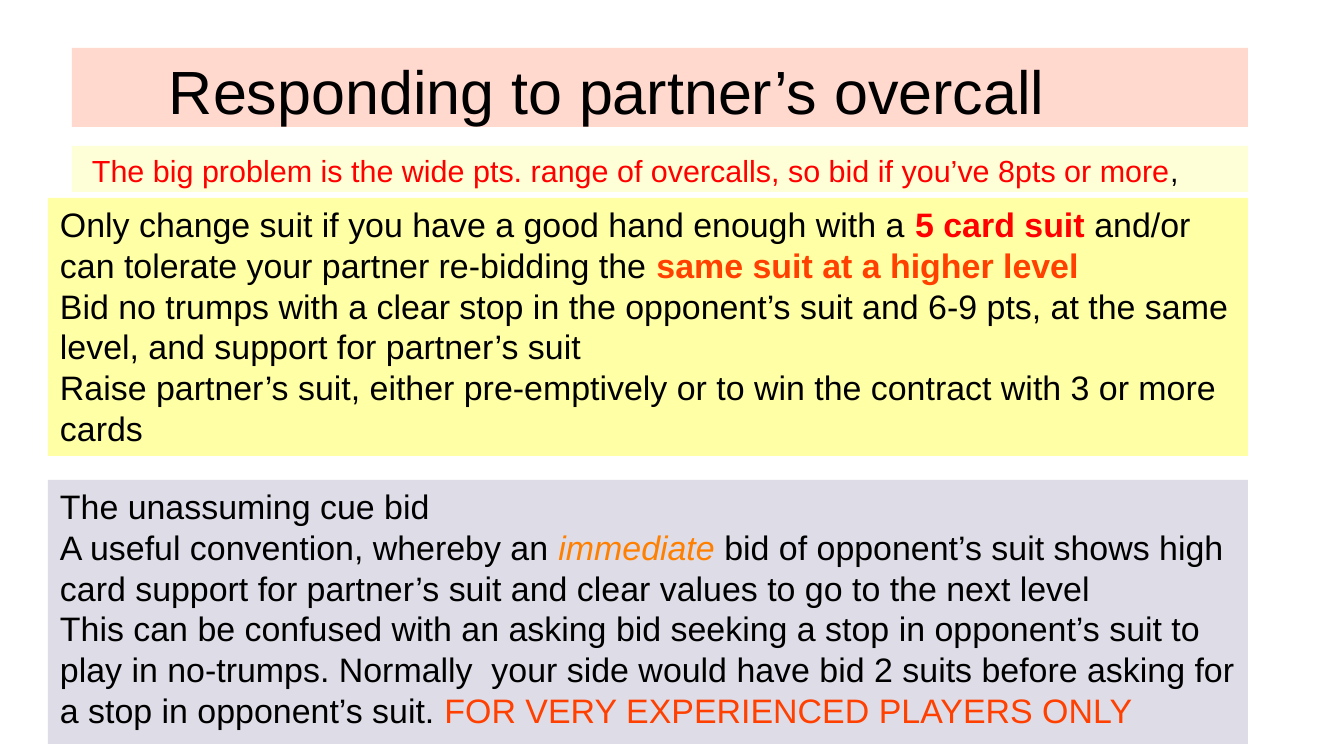
"""Build a bridge lesson slide on responding to partner's overcall."""
import pptx
import pptx.dml.color
import pptx.enum.shapes
import pptx.enum.text
import pptx.util

RGB = pptx.dml.color.RGBColor
BLACK = RGB(0x00, 0x00, 0x00)
RED = RGB(0xFF, 0x00, 0x00)
VERMILION = RGB(0xFF, 0x40, 0x00)
ORANGE = RGB(0xFF, 0x80, 0x00)
SALMON = RGB(0xFF, 0xD8, 0xCE)
CREAM = RGB(0xFF, 0xFF, 0xD7)
YELLOW = RGB(0xFF, 0xFF, 0xA6)
LILAC = RGB(0xDE, 0xDC, 0xE6)

PLAIN = {}
FIVE_CARDS = {"color": RED, "bold": True}
HIGHER_LEVEL = {"color": VERMILION, "bold": True}
IMMEDIATE = {"color": ORANGE, "italic": True}


def px(count):
    return pptx.util.Emu(round(count * 914400 / 122))


title = [[("Responding to partner’s overcall", PLAIN)]]
problem = [[
    ("The big problem is the wide pts. range of overcalls, so bid if you’ve 8pts or more", {"color": RED}),
    (",", PLAIN),
]]
responses = [
    [
        ("Only change suit if you have a good hand enough with a ", PLAIN),
        ("5 card suit", FIVE_CARDS),
        (" and/or can tolerate your partner re-bidding the ", PLAIN),
        ("same suit at a higher level", HIGHER_LEVEL),
    ],
    [("Bid no trumps with a clear stop in the opponent’s suit and 6-9 pts, at the same level, "
      "and support for partner’s suit", PLAIN)],
    [("Raise partner’s suit, either pre-emptively or to win the contract with 3 or more cards", PLAIN)],
]
cue_bid = [
    [("The unassuming cue bid", PLAIN)],
    [
        ("A useful convention, whereby an ", PLAIN),
        ("immediate", IMMEDIATE),
        (" bid of opponent’s suit shows high card support for partner’s suit "
         "and clear values to go to the next level", PLAIN),
    ],
    [
        ("This can be confused with an asking bid seeking a stop in opponent’s suit to play in no-trumps. "
         "Normally  your side would have bid 2 suits before asking for a stop in opponent’s suit. ", PLAIN),
        ("FOR VERY EXPERIENCED PLAYERS ONLY", {"color": VERMILION}),
    ],
]

panels = [
    ((72, 48, 1176, 79), SALMON, 36, 97, title),
    ((72, 146, 1176, 46), CREAM, 18, 20, problem),
    ((48, 198, 1200, 258), YELLOW, 20, 12, responses),
    ((48, 480, 1200, 264), LILAC, 20, 12, cue_bid),
]

deck = pptx.Presentation()
deck.slide_width = px(1344)
deck.slide_height = px(756)
slide = deck.slides.add_slide(deck.slide_layouts[6])

for bounds, fill, size, indent, paragraphs in panels:
    panel = slide.shapes.add_shape(
        pptx.enum.shapes.MSO_SHAPE.RECTANGLE, *[px(length) for length in bounds])
    panel.shadow.inherit = False
    panel.fill.solid()
    panel.fill.fore_color.rgb = fill
    panel.line.fill.background()

    frame = panel.text_frame
    frame_format = {
        "word_wrap": True,
        "vertical_anchor": pptx.enum.text.MSO_ANCHOR.TOP,
        "margin_left": px(indent),
        "margin_right": px(12),
        "margin_top": px(6),
        "margin_bottom": px(6),
    }
    for name, value in frame_format.items():
        setattr(frame, name, value)

    for index, pieces in enumerate(paragraphs):
        paragraph = frame.add_paragraph() if index else frame.paragraphs[0]
        paragraph.alignment = pptx.enum.text.PP_ALIGN.LEFT
        paragraph.line_spacing = pptx.util.Pt(size * 1.2)
        for words, emphasis in pieces:
            run = paragraph.add_run()
            run.text = words
            run.font.color.rgb = emphasis.get("color", BLACK)
            font_format = {
                "name": "Arial",
                "size": pptx.util.Pt(size),
                "bold": emphasis.get("bold", False),
                "italic": emphasis.get("italic", False),
            }
            for name, value in font_format.items():
                setattr(run.font, name, value)

deck.save("out.pptx")
